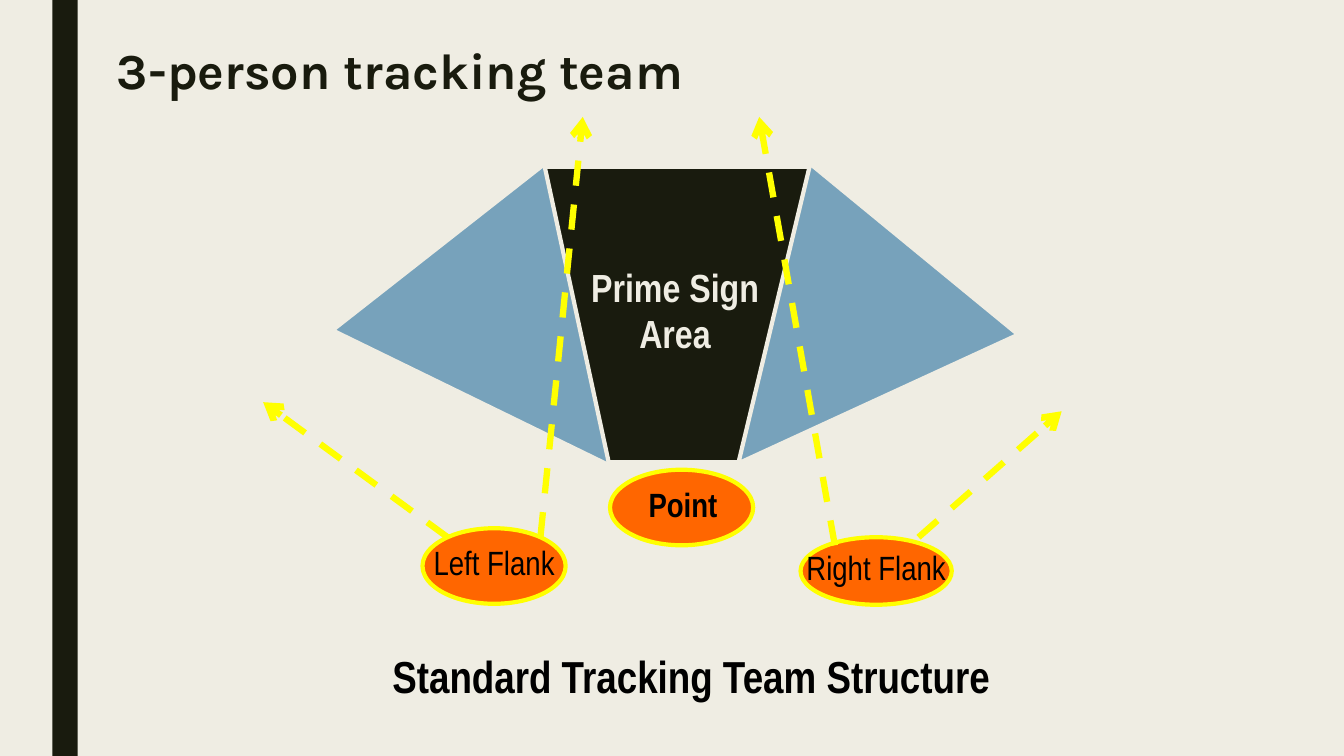
"""Build the slide that shows the structure of a 3-person tracking team."""
import dataclasses

import lxml.etree
import pptx
import pptx.dml.color
import pptx.enum.dml
import pptx.enum.shapes
import pptx.enum.text
import pptx.oxml.ns
import pptx.util

Inches = pptx.util.Inches
Pt = pptx.util.Pt
RGB = pptx.dml.color.RGBColor.from_string
SHAPES = pptx.enum.shapes.MSO_SHAPE
ANCHOR = pptx.enum.text.MSO_ANCHOR


@dataclasses.dataclass(frozen=True)
class Theme:
    paper: object = RGB("EFEDE3")
    ink: object = RGB("191B0E")
    black: object = RGB("000000")
    flank_area: object = RGB("77A2BB")
    person: object = RGB("FF6600")
    signal: object = RGB("FFFF00")
    title_font: str = "Karla"
    label_font: str = "Arial Narrow"
    title_size: object = Pt(36)
    caption_size: object = Pt(32)
    area_size: object = Pt(28)
    person_size: object = Pt(24)


theme = Theme()


def style_shape(shape, fill, line, width):
    """Give a shape a plain fill and outline without a shadow."""
    shape.shadow.inherit = False
    shape.fill.solid()
    shape.fill.fore_color.rgb = fill
    shape.line.color.rgb = line
    shape.line.width = Pt(width)


def write_label(shape, lines, size, color, bold, wrap, anchor):
    """Write centred lines in the label font."""
    frame = shape.text_frame
    frame.word_wrap = wrap
    frame.vertical_anchor = anchor
    for index, text in enumerate(lines):
        paragraph = frame.add_paragraph() if index else frame.paragraphs[0]
        paragraph.alignment = pptx.enum.text.PP_ALIGN.CENTER
        paragraph.line_spacing = 0.8
        if index:
            paragraph.space_before = Pt(6)
        run = paragraph.add_run()
        run.text = text
        run.font.name = theme.label_font
        run.font.size = size
        run.font.bold = bold
        run.font.color.rgb = color


presentation = pptx.Presentation()
presentation.slide_width = Inches(13.33)
presentation.slide_height = Inches(7.5)
slide = presentation.slides.add_slide(presentation.slide_layouts[5])
slide.background.fill.solid()
slide.background.fill.fore_color.rgb = theme.paper
shapes = slide.shapes

title = shapes.title
title.left, title.top = Inches(1.06), Inches(0.41)
title.width, title.height = Inches(11.59), Inches(1.62)
title.text_frame.word_wrap = True
title.text_frame.vertical_anchor = ANCHOR.TOP
paragraph = title.text_frame.paragraphs[0]
paragraph.alignment = pptx.enum.text.PP_ALIGN.LEFT
paragraph.line_spacing = 0.89
run = paragraph.add_run()
run.text = "3-person tracking team"
run.font.name = theme.title_font
run.font.size = theme.title_size
run.font.bold = True
run.font.color.rgb = theme.ink

side_bar = shapes.add_shape(
    SHAPES.RECTANGLE, Inches(0.52), 0, Inches(0.25), Inches(7.5))
style_shape(side_bar, theme.ink, theme.ink, 0)
side_bar.line.fill.background()

builder = shapes.build_freeform(Inches(5.36), Inches(1.66))
builder.add_line_segments(
    [(Inches(x), Inches(y)) for x, y in ((6.03, 4.58), (7.36, 4.58), (8.03, 1.66))],
    close=True)
prime_area = builder.convert_to_shape()
style_shape(prime_area, theme.ink, theme.paper, 2.25)
write_label(prime_area, ["Prime Sign", "Area"], theme.area_size, theme.paper,
            True, False, ANCHOR.MIDDLE)

for left, rotation in ((6.86, 219.4), (3.86, 141.9)):
    flank_area = shapes.add_shape(
        SHAPES.ISOSCELES_TRIANGLE,
        Inches(left), Inches(2.16), Inches(2.67), Inches(2.75))
    flank_area.rotation = rotation
    style_shape(flank_area, theme.flank_area, theme.paper, 3)

people = (
    ("", 6.05, 4.66, 1.42, 0.75),
    ("Left Flank", 4.19, 5.24, 1.42, 0.75),
    ("Right Flank", 7.94, 5.33, 1.5, 0.67),
)
for name, *box in people:
    person = shapes.add_shape(SHAPES.OVAL, *map(Inches, box))
    style_shape(person, theme.person, theme.signal, 3)
    if name:
        write_label(person, [name], theme.person_size, theme.black,
                    False, False, ANCHOR.MIDDLE)

captions = (
    ("Point", theme.person_size, 6.11, 4.83, 1.33, 0.42),
    ("Standard Tracking Team Structure", theme.caption_size, 3.36, 6.49, 7, 0.53),
)
for text, size, *box in captions:
    caption = shapes.add_textbox(*map(Inches, box))
    write_label(caption, [text], size, theme.black, True, True, ANCHOR.TOP)

sight_lines = (
    (5.36, 5.33, 5.78, 1.16),
    (4.44, 5.33, 2.61, 3.99),
    (9.11, 5.33, 10.53, 4.08),
    (8.28, 5.41, 7.53, 1.16),
)
for ends in sight_lines:
    arrow = shapes.add_connector(
        pptx.enum.shapes.MSO_CONNECTOR.STRAIGHT, *map(Inches, ends))
    arrow.line.color.rgb = theme.signal
    arrow.line.width = Pt(4.5)
    arrow.line.dash_style = pptx.enum.dml.MSO_LINE.DASH
    lxml.etree.SubElement(
        arrow.line._get_or_add_ln(), pptx.oxml.ns.qn("a:tailEnd"), type="arrow")
    lxml.etree.SubElement(
        arrow._element.spPr, pptx.oxml.ns.qn("a:effectLst"))

presentation.save("out.pptx")
